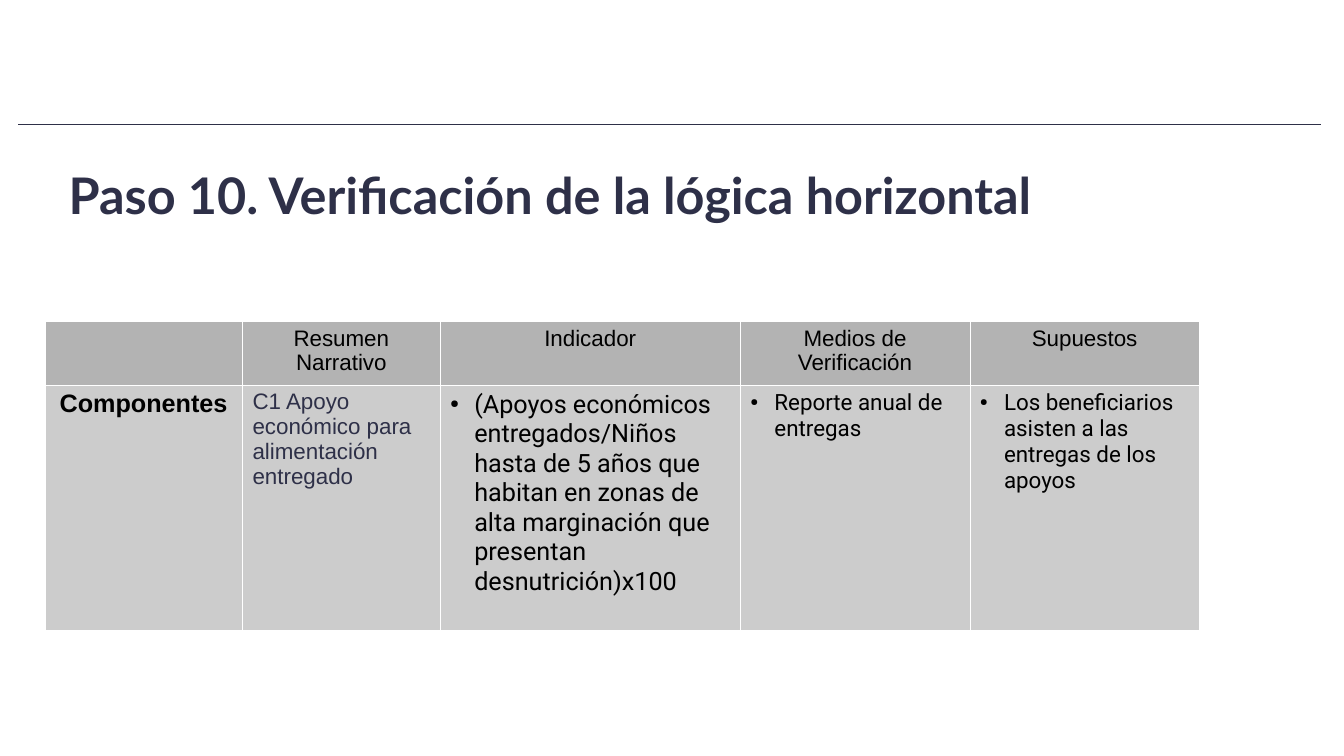
from pptx import Presentation
from pptx.dml.color import RGBColor
from pptx.enum.shapes import MSO_CONNECTOR
from pptx.enum.text import MSO_ANCHOR, PP_ALIGN
from pptx.oxml.ns import qn
from pptx.util import Pt
from lxml import etree

LINE = MSO_CONNECTOR.STRAIGHT
MIDDLE = MSO_ANCHOR.MIDDLE
LEFT, CENTER = PP_ALIGN.LEFT, PP_ALIGN.CENTER
COLORS = {"navy": "2E3048", "black": "000000", "white": "FFFFFF",
          "head": "B3B3B3", "body": "CCCCCC"}


def style(para, size, face, color, bold=False):
    for run in para.runs:
        font = run.font
        font.size, font.name, font.bold = Pt(size), face, bold
        font.color.rgb = RGBColor.from_string(COLORS[color])


def add(parent, tag, **attrs):
    node = etree.SubElement(parent, qn(tag))
    for key, value in attrs.items():
        node.set(key, str(value))
    return node


prs = Presentation()
prs.slide_width, prs.slide_height = Pt(960), Pt(540)
slide = prs.slides.add_slide(prs.slide_layouts[6])

# Rule across the top
rule = slide.shapes.add_connector(LINE, Pt(13.2), Pt(88.8), Pt(943.6), Pt(88.8))
rule.line.color.rgb = RGBColor.from_string(COLORS["navy"])
rule.line.width = Pt(0.75)
add(rule._element.spPr, "a:effectLst")

# Title
title = slide.shapes.add_textbox(Pt(42), Pt(100.8), Pt(873.4), Pt(81.4))
frame = title.text_frame
frame.word_wrap = True
frame.vertical_anchor = MIDDLE
frame.text = "Paso 10. Verificación de la lógica horizontal"
frame.paragraphs[0].line_spacing = 0.9
style(frame.paragraphs[0], 36, "Lato", "navy", True)

# Table: text, size, font, colour, bold, alignment, bullet
heads = ["", "Resumen Narrativo", "Indicador", "Medios de Verificación", "Supuestos"]
rows = [
    [(text, 16, "Arial", "black", False, CENTER, False) for text in heads],
    [("Componentes", 18, "Arial", "black", True, CENTER, False),
     ("C1 Apoyo económico para alimentación entregado",
      16, "Arial", "navy", False, LEFT, False),
     ("(Apoyos económicos entregados/Niños hasta de 5 años que habitan en zonas "
      "de alta marginación que presentan desnutrición)x100",
      18, "Roboto", "black", False, LEFT, True),
     ("Reporte anual de entregas", 16, "Roboto", "black", False, LEFT, True),
     ("Los beneficiarios asisten a las entregas de los apoyos",
      16, "Roboto", "black", False, LEFT, True)],
]
widths = [141.2, 141.2, 214.4, 164, 164]
heights = [42.4, 175.6]
table = slide.shapes.add_table(len(rows), len(widths), Pt(32), Pt(229.2),
                               Pt(sum(widths)), Pt(sum(heights))).table
for col, width in zip(table.columns, widths):
    col.width = Pt(width)
for row, height in zip(table.rows, heights):
    row.height = Pt(height)

for r, row in enumerate(rows):
    for c, (text, size, face, color, bold, align, bullet) in enumerate(row):
        cell = table.cell(r, c)
        cell.margin_left = cell.margin_right = Pt(7.2)
        cell.margin_top = cell.margin_bottom = Pt(3.6)

        # Thin white borders, then the fill
        props = cell._tc.get_or_add_tcPr()
        for side in ("L", "R", "T", "B"):
            edge = add(props, "a:ln" + side, w=Pt(0.06))
            add(add(edge, "a:solidFill"), "a:srgbClr", val=COLORS["white"])
        cell.fill.solid()
        shade = COLORS["body" if r else "head"]
        cell.fill.fore_color.rgb = RGBColor.from_string(shade)

        # Text and bullet
        cell.text_frame.text = text
        para = cell.text_frame.paragraphs[0]
        para.alignment = align
        if bullet:
            ppr = para._p.get_or_add_pPr()
            ppr.set("marL", str(Pt(17.2)))
            ppr.set("indent", str(-Pt(17.2)))
            add(add(ppr, "a:buClr"), "a:srgbClr", val=COLORS["black"])
            add(ppr, "a:buSzPct", val=45000)
            add(ppr, "a:buChar", char="●")
        style(para, size, face, color, bold)

prs.save("out.pptx")
